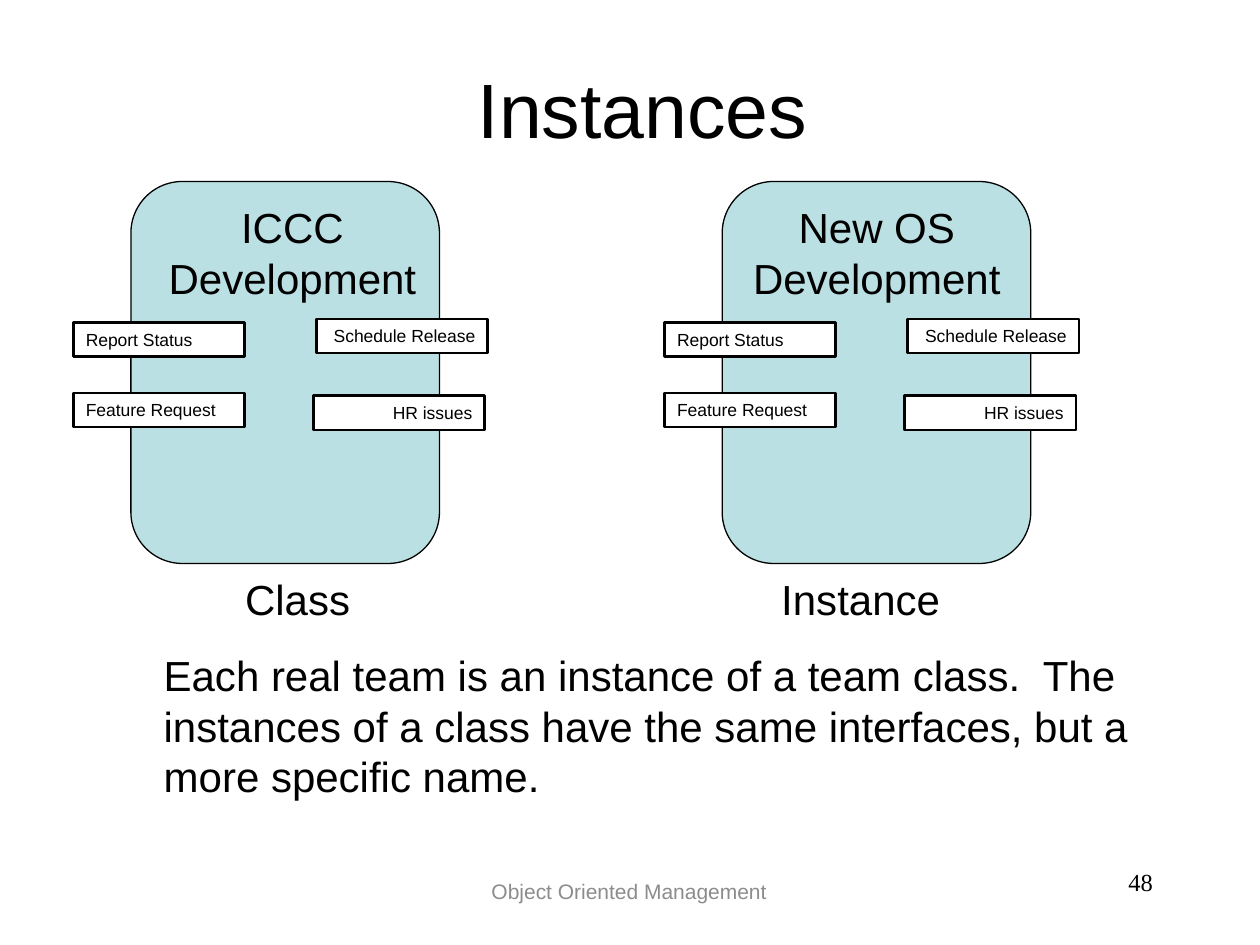
from dataclasses import dataclass

from lxml import etree
from pptx import Presentation
from pptx.dml.color import RGBColor
from pptx.enum.shapes import MSO_SHAPE
from pptx.enum.text import MSO_ANCHOR, PP_ALIGN
from pptx.oxml.ns import qn
from pptx.util import Cm, Pt

LEFT, CENTER, RIGHT = PP_ALIGN.LEFT, PP_ALIGN.CENTER, PP_ALIGN.RIGHT
TOP, MIDDLE = MSO_ANCHOR.TOP, MSO_ANCHOR.MIDDLE
RECTANGLE, ROUNDED = MSO_SHAPE.RECTANGLE, MSO_SHAPE.ROUNDED_RECTANGLE
TITLE_ONLY = 5

COLORS = {"ink": "000000", "team": "BBE0E3", "paper": "FFFFFF", "footer": "8C8C8C"}


@dataclass(frozen=True)
class Box:
    """Position and size in centimetres."""
    left: float
    top: float
    width: float
    height: float

    def lengths(self) -> list:
        return [Cm(v) for v in (self.left, self.top, self.width, self.height)]


@dataclass(frozen=True)
class Interface:
    label: str
    offset: float  # from the left edge of the team
    top: float
    align: PP_ALIGN


@dataclass(frozen=True)
class Team:
    name: str
    left: float
    name_offset: float
    name_width: float


INTERFACES = [
    Interface("Report Status", -1.16, 6.5, LEFT),
    Interface("Feature Request", -1.16, 7.92, LEFT),
    Interface("Schedule Release", 3.74, 6.43, RIGHT),
    Interface("HR issues", 3.68, 7.98, RIGHT),
]
TEAMS = [
    Team("ICCC Development", 2.64, 0.36, 5.79),
    Team("New OS Development", 14.56, 0.08, 6.07),
]


def rgb(name: str) -> RGBColor:
    return RGBColor.from_string(COLORS[name])


def write(shape, paragraphs: list[str], size: float, align=LEFT, anchor=TOP,
          color: str = "ink", font: str = "Arial", gap: float = 0) -> None:
    frame = shape.text_frame
    frame.word_wrap = True
    frame.vertical_anchor = anchor
    font_format = {"size": Pt(size), "name": font}
    for index, text in enumerate(paragraphs):
        paragraph = frame.add_paragraph() if index else frame.paragraphs[0]
        paragraph.alignment = align
        if index:
            paragraph.space_before = Pt(gap)
        run = paragraph.add_run()
        run.text = text
        for attribute, value in font_format.items():
            setattr(run.font, attribute, value)
        run.font.color.rgb = rgb(color)


def add_text(slide, box: Box, paragraphs: list[str], size: float, **style):
    text_box = slide.shapes.add_textbox(*box.lengths())
    write(text_box, paragraphs, size, **style)
    return text_box


def add_block(slide, kind, box: Box, fill: str, line_width: float):
    block = slide.shapes.add_shape(kind, *box.lengths())
    block.shadow.inherit = False
    block.fill.solid()
    block.fill.fore_color.rgb = rgb(fill)
    block.line.color.rgb = rgb("ink")
    block.line.width = Pt(line_width)
    return block


def add_tabs(paragraph, positions: list[float]) -> None:
    properties = paragraph._p.get_or_add_pPr()
    tab_list = etree.SubElement(properties, qn("a:tabLst"))
    for position in positions:
        etree.SubElement(tab_list, qn("a:tab"), pos=str(Cm(position)), algn="l")


def draw_team(slide, team: Team) -> None:
    add_block(slide, ROUNDED, Box(team.left, 3.66, 6.22, 7.7), "team", 0.75)
    name_box = Box(team.left + team.name_offset, 3.94, team.name_width, 2.29)
    add_text(slide, name_box, [team.name], 24, align=CENTER)
    for interface in INTERFACES:
        box = Box(team.left + interface.offset, interface.top, 3.45, 0.69)
        block = add_block(slide, RECTANGLE, box, "paper", 1.5)
        write(block, [interface.label], 10, align=interface.align)


def main() -> None:
    deck = Presentation()
    deck.slide_width, deck.slide_height = Cm(25.4), Cm(19.05)
    slide = deck.slides.add_slide(deck.slide_layouts[TITLE_ONLY])

    # Title
    title = slide.shapes.title
    title.left, title.top, title.width, title.height = Box(2.16, 1.12, 21.59, 2.11).lengths()
    write(title, ["Instances"], 44, align=CENTER, anchor=MIDDLE)

    # Teams with their interfaces
    for team in TEAMS:
        draw_team(slide, team)

    # Captions under the teams and the explanation
    explanation = add_text(slide, Box(3.05, 11.43, 20.8, 4.85), [
        "\tClass\tInstance",
        "Each real team is an instance of a team class.  The instances of a class "
        "have the same interfaces, but a more specific name.",
    ], 24, gap=15)
    add_tabs(explanation.text_frame.paragraphs[0], [1.64, 12.45])

    # Footer and page number
    add_text(slide, Box(7.49, 17.35, 10.39, 1.24), ["Object Oriented Management"], 12,
             align=CENTER, anchor=MIDDLE, color="footer")
    add_text(slide, Box(18.21, 17.35, 5.28, 1.24), ["48"], 14,
             align=RIGHT, font="Times New Roman")

    deck.save("out.pptx")


if __name__ == "__main__":
    main()
